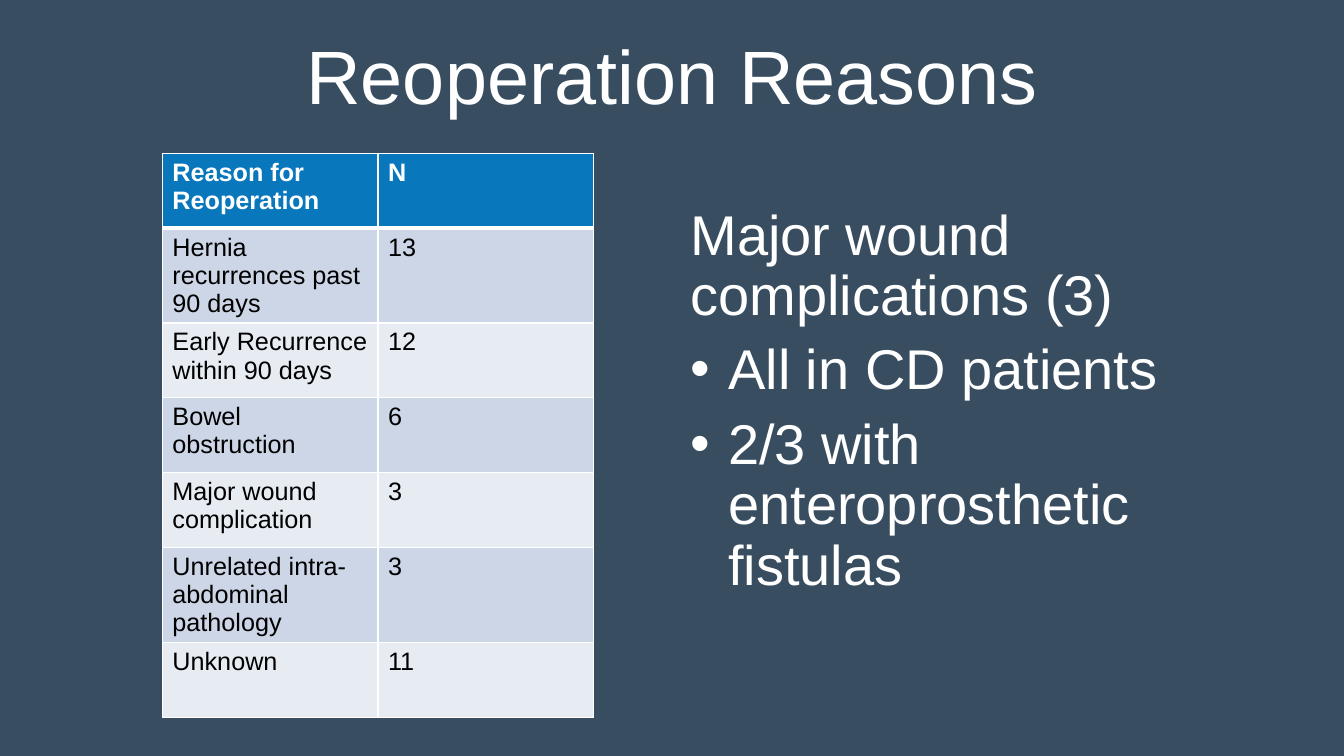
"""Build the slide on reoperation reasons: a table beside a short list."""
from lxml.etree import SubElement
from pptx import Presentation
from pptx.dml.color import RGBColor
from pptx.enum.text import MSO_ANCHOR, MSO_AUTO_SIZE, PP_ALIGN
from pptx.oxml.ns import qn
from pptx.util import Pt

TITLE = "Reoperation Reasons"
ROWS = [
    ("Reason for Reoperation", "N"),
    ("Hernia recurrences past 90 days", "13"),
    ("Early Recurrence within 90 days", "12"),
    ("Bowel obstruction", "6"),
    ("Major wound complication", "3"),
    ("Unrelated intra-abdominal pathology", "3"),
    ("Unknown", "11"),
]
FINDINGS = [
    ("Major wound complications (3)", False),
    ("All in CD patients", True),
    ("2/3 with enteroprosthetic fistulas", True),
]
FONT = "Arial"
WHITE, BLACK, SLATE = "FFFFFF", "000000", "384D60"
HEADER_FILL, BAND_FILLS = "0877BC", ("E7ECF3", "CCD6E7")
ROW_HEIGHT, TALL_ROW_HEIGHT, TALL_ROW = 53.5, 65, 5
COLUMN_WIDTH = 154
INDENT = 27


def paint(target, color):
    """Give a fill a solid colour."""
    target.solid()
    target.fore_color.rgb = RGBColor.from_string(color)


def style(para, size, color, bold=False):
    """Format every run of a paragraph."""
    for span in para.runs:
        span.font.name = FONT
        span.font.size = Pt(size)
        span.font.bold = bold
        span.font.color.rgb = RGBColor.from_string(color)


def place(box, left, top, width, height):
    """Move and size a shape in points."""
    box.left, box.top, box.width, box.height = map(Pt, (left, top, width, height))


def set_bullet(para, bulleted):
    """Set the bullet and hanging indent of a paragraph."""
    properties = para._p.get_or_add_pPr()
    indent = Pt(INDENT) if bulleted else 0
    properties.set("marL", str(indent))
    properties.set("indent", str(-indent))
    if bulleted:
        SubElement(properties, qn("a:buChar"), char="•")
    else:
        SubElement(properties, qn("a:buNone"))


def set_borders(cell, widths):
    """Draw white cell borders with a width for each side."""
    properties = cell._tc.get_or_add_tcPr()
    for side, width in widths.items():
        line = SubElement(properties, qn(f"a:ln{side}"), w=str(Pt(width)))
        SubElement(SubElement(line, qn("a:solidFill")), qn("a:srgbClr"), val=WHITE)


def add_title(slide):
    """Fill the title placeholder."""
    title = slide.shapes.title
    place(title, 0, 5, 960, 104.5)
    frame = title.text_frame
    frame.text = TITLE
    frame.auto_size = MSO_AUTO_SIZE.NONE
    frame.vertical_anchor = MSO_ANCHOR.MIDDLE
    para = frame.paragraphs[0]
    para.alignment = PP_ALIGN.CENTER
    para.line_spacing = 0.9
    style(para, 54, WHITE)


def add_findings(slide):
    """Fill the body placeholder with the list."""
    body = slide.placeholders[1]
    place(body, 486, 144, 408, 343)
    frame = body.text_frame
    frame.text = "\n".join(text for text, _ in FINDINGS)
    frame.auto_size = MSO_AUTO_SIZE.NONE
    frame.vertical_anchor = MSO_ANCHOR.TOP
    for index, (para, (_, bulleted)) in enumerate(zip(frame.paragraphs, FINDINGS)):
        set_bullet(para, bulleted)
        para.line_spacing = 0.9
        para.space_before = Pt(10 if index else 0)
        style(para, 40, WHITE)


def add_reasons(slide):
    """Add the table of reasons and counts."""
    heights = [TALL_ROW_HEIGHT if index == TALL_ROW else ROW_HEIGHT
               for index in range(len(ROWS))]
    columns = len(ROWS[0])
    table = slide.shapes.add_table(
        len(ROWS), columns, Pt(116), Pt(109.5),
        Pt(columns * COLUMN_WIDTH), Pt(sum(heights))).table
    for column in table.columns:
        column.width = Pt(COLUMN_WIDTH)
    for row_index, values in enumerate(ROWS):
        table.rows[row_index].height = Pt(heights[row_index])
        header = row_index == 0
        fill = HEADER_FILL if header else BAND_FILLS[row_index % 2]
        for column_index, value in enumerate(values):
            cell = table.cell(row_index, column_index)
            cell.text_frame.text = value
            style(cell.text_frame.paragraphs[0], 18, WHITE if header else BLACK, header)
            set_borders(cell, {"L": 1, "R": 1, "T": 3 if row_index == 1 else 1,
                               "B": 3 if header else 1})
            paint(cell.fill, fill)


def main():
    """Create the deck and save it."""
    deck = Presentation()
    deck.slide_width, deck.slide_height = Pt(960), Pt(540)
    slide = deck.slides.add_slide(deck.slide_layouts[1])
    paint(slide.background.fill, SLATE)
    add_title(slide)
    add_findings(slide)
    add_reasons(slide)
    deck.save("out.pptx")


if __name__ == "__main__":
    main()
